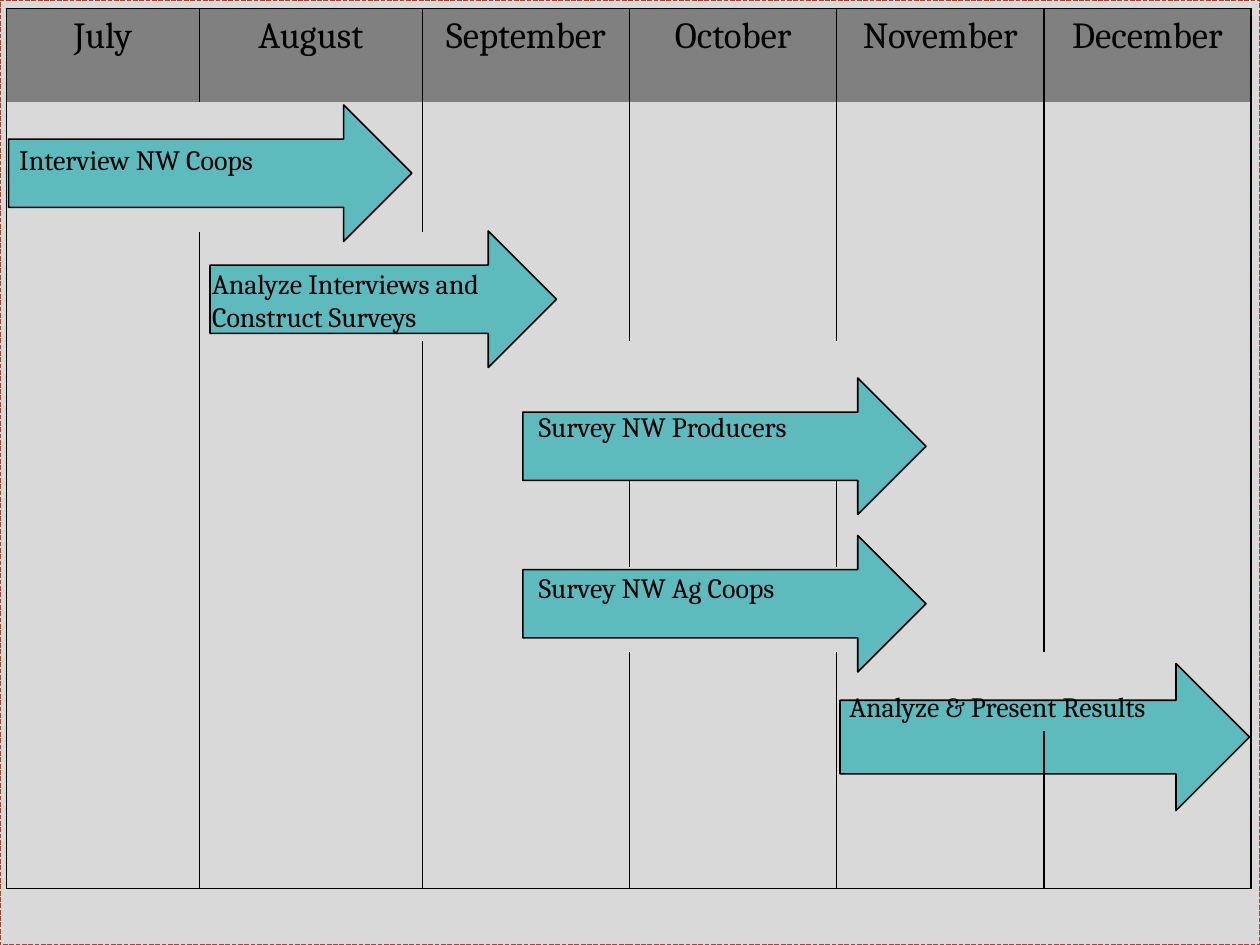
"""Build a six-month project timeline with task arrows behind a month table."""
from lxml import etree
from pptx import Presentation
from pptx.dml.color import RGBColor
from pptx.enum.dml import MSO_LINE
from pptx.enum.shapes import MSO_SHAPE
from pptx.enum.text import PP_ALIGN
from pptx.oxml.ns import qn
from pptx.util import Pt

RECT, ARROW = MSO_SHAPE.RECTANGLE, MSO_SHAPE.RIGHT_ARROW
DASH, CENTER = MSO_LINE.SQUARE_DOT, PP_ALIGN.CENTER
BLACK = RGBColor(0, 0, 0)
GRAY = RGBColor(0x80, 0x80, 0x80)
PALE = RGBColor(0xD9, 0xD9, 0xD9)
MIST = RGBColor(0xC5, 0xD1, 0xD7)
RUST = RGBColor(0x9B, 0x49, 0x36)
TEAL = RGBColor(0x5D, 0xBB, 0xBD)
FONT = "Cambria"
WIDE, HIGH = 720, 540

MONTHS = [("July", 0), ("August", 1), ("September", 2),
          ("October", 4), ("November", 5), ("December", 7)]
TASKS = [
    ("Interview NW Coops", 1, 0, 2, 24.6),
    ("Analyze Interviews and Construct Surveys", 2, 1, 2, 21.7),
    ("Survey NW Producers", 3, 3, 3, 40.5),
    ("Survey NW Ag Coops", 5, 3, 3, 3.6),
    ("Analyze & Present Results", 6, 5, 3, 23),
]
ARROWS = [(5, 60, 230.4, 78), (120, 132, 198, 78), (298.8, 216, 230.4, 78),
          (480, 379.2, 234, 84), (298.8, 306, 230.4, 78)]
HALF = 59.2
COLS = [110.2, 127.4, HALF, HALF, 2 * HALF, HALF, HALF, 2 * HALF]
ROWS = [53.3, 74.2, 62.4, 79.9, 49, 49, 44, 90]
PAIRS = [(row, col) for row in (0, 1, 7) for col in (2, 5)] + [(6, 2)]


def add_box(slide, kind, place, fill, line):
    box = slide.shapes.add_shape(kind, *map(Pt, place))
    box.shadow.inherit = False
    box.fill.solid()
    box.fill.fore_color.rgb = fill
    box.line.color.rgb = line
    box.line.width = Pt(0.9)
    return box


def set_edges(cell, shown):
    props = cell._tc.get_or_add_tcPr()
    for side in "LRTB":
        edge = etree.SubElement(props, qn("a:ln" + side), w=str(Pt(1)))
        if side in shown:
            paint = etree.SubElement(edge, qn("a:solidFill"))
            etree.SubElement(paint, qn("a:srgbClr"), val=str(BLACK))
        else:
            etree.SubElement(edge, qn("a:noFill"))


def write(cell, text, size):
    cell.text_frame.text = text
    font = cell.text_frame.paragraphs[0].runs[0].font
    font.name, font.size, font.bold = FONT, Pt(size), False
    font.color.rgb = BLACK


def add_grid(slide):
    last_row, last_col = len(ROWS) - 1, len(COLS)
    frame = slide.shapes.add_table(len(ROWS), last_col, Pt(3.8), Pt(5),
                                   Pt(sum(COLS)), Pt(sum(ROWS)))
    table = frame.table
    table.first_row = table.horz_banding = False
    for col, width in zip(table.columns, COLS):
        col.width = Pt(width)
    for row, height in zip(table.rows, ROWS):
        row.height = Pt(height)

    spans = {pair: 2 for pair in PAIRS}
    spans.update({(row, col): span for _, row, col, span, _ in TASKS})
    for (row, col), span in spans.items():
        table.cell(row, col).merge(table.cell(row, col + span - 1))

    bounds = {col for _, col in MONTHS} | {last_col}
    for row in range(len(ROWS)):
        for col in range(last_col):
            cell = table.cell(row, col)
            shown = ""
            if not cell.is_spanned:
                shown += "L" if col in bounds else ""
                shown += "R" if col + spans.get((row, col), 1) in bounds else ""
                shown += {0: "T", last_row: "B"}.get(row, "")
            set_edges(cell, shown)
            if row == 0:
                cell.fill.solid()
                cell.fill.fore_color.rgb = GRAY
            else:
                cell.fill.background()

    for name, col in MONTHS:
        cell = table.cell(0, col)
        write(cell, name, 21)
        cell.text_frame.paragraphs[0].alignment = CENTER
    for text, row, col, _, top in TASKS:
        cell = table.cell(row, col)
        write(cell, text, 16)
        cell.margin_top = Pt(top)


def main():
    deck = Presentation()
    deck.slide_width, deck.slide_height = Pt(WIDE), Pt(HIGH)
    slide = deck.slides.add_slide(deck.slide_layouts[6])
    slide.background.fill.solid()
    slide.background.fill.fore_color.rgb = MIST
    panel = add_box(slide, RECT, (0, 0, WIDE, HIGH), PALE, RUST)
    panel.line.dash_style = DASH
    for place in ARROWS:
        add_box(slide, ARROW, place, TEAL, BLACK)
    add_grid(slide)
    deck.save("out.pptx")


if __name__ == "__main__":
    main()
